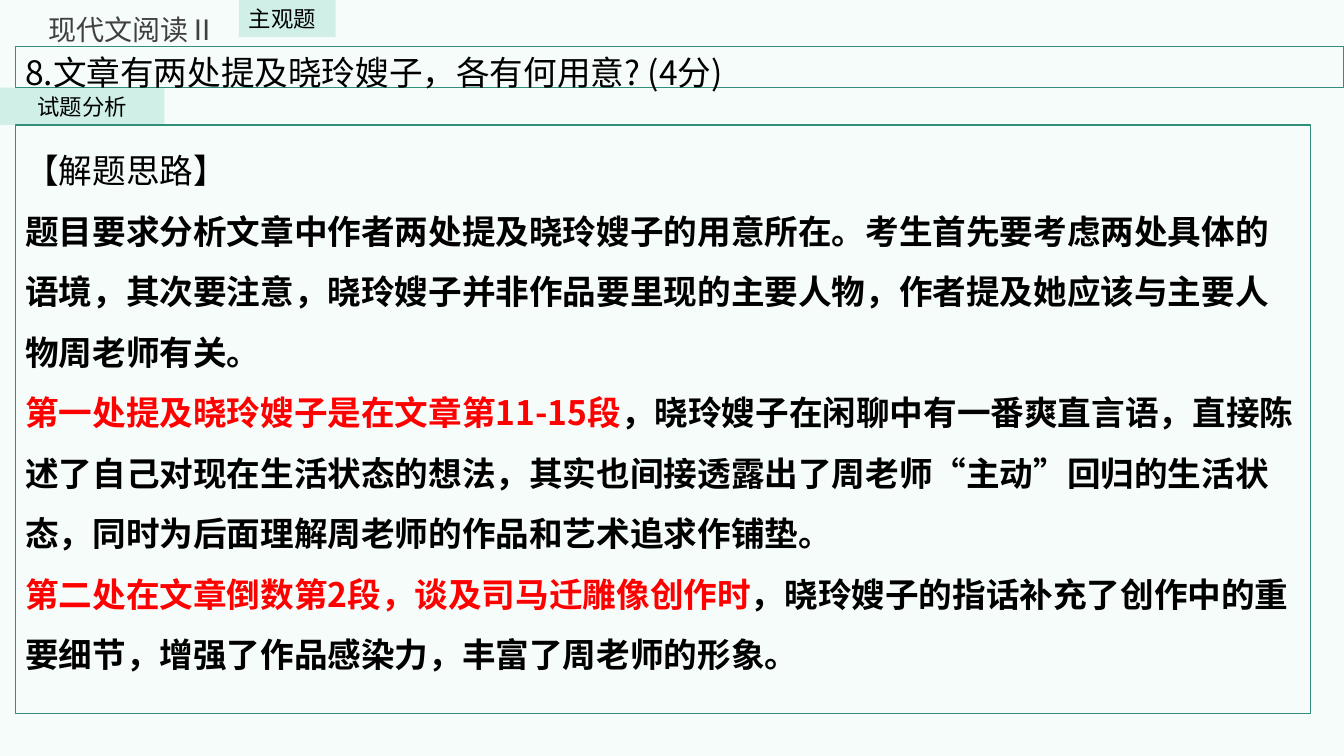
"""Build a reading-comprehension slide that analyses question 8."""
from pptx import Presentation
from pptx.dml.color import RGBColor
from pptx.enum.shapes import MSO_SHAPE
from pptx.enum.text import MSO_ANCHOR, MSO_AUTO_SIZE, PP_ALIGN
from pptx.oxml.ns import qn
from pptx.util import Inches, Pt
from lxml import etree

RECTANGLE = MSO_SHAPE.RECTANGLE
TOP, MIDDLE = MSO_ANCHOR.TOP, MSO_ANCHOR.MIDDLE
NO_AUTOFIT = MSO_AUTO_SIZE.NONE
LEFT, CENTER, JUSTIFY = PP_ALIGN.LEFT, PP_ALIGN.CENTER, PP_ALIGN.JUSTIFY

BACKGROUND = RGBColor(0xF6, 0xFC, 0xFA)
MINT = RGBColor(0xD0, 0xEF, 0xE7)
GREEN = RGBColor(0x31, 0x8F, 0x79)
GRAY = RGBColor(0x40, 0x40, 0x40)
BLACK = RGBColor(0, 0, 0)
RED = RGBColor(0xFF, 0, 0)
CHINESE_FONT = "Noto Sans CJK SC"

WIDTH, HEIGHT = 13.33, 7.5
MARGIN = 0.15
TAG_HEIGHT = 0.37
QUESTION_TOP, QUESTION_HEIGHT = 0.46, 0.41
TAG_TOP = QUESTION_TOP + QUESTION_HEIGHT
ANALYSIS_TOP = TAG_TOP + TAG_HEIGHT


def place(shape, left, top, width, height, anchor=MIDDLE):
    """Set the frame of a shape in inches and fix its text box settings."""
    shape.left, shape.top = Inches(left), Inches(top)
    shape.width, shape.height = Inches(width), Inches(height)
    frame = shape.text_frame
    frame.auto_size = NO_AUTOFIT
    frame.word_wrap = True
    frame.vertical_anchor = anchor


def style(paragraph, size, color, alignment=LEFT, latin=CHINESE_FONT, bold=False):
    """Set the font of a paragraph for Latin and East Asian text."""
    paragraph.alignment = alignment
    font = paragraph.font
    font.size, font.bold, font.name = Pt(size), bold, latin
    font.color.rgb = color
    properties = paragraph._p.pPr.find(qn("a:defRPr"))
    etree.SubElement(properties, qn("a:ea"), typeface=CHINESE_FONT)


presentation = Presentation()
presentation.slide_width, presentation.slide_height = Inches(WIDTH), Inches(HEIGHT)
slide = presentation.slides.add_slide(presentation.slide_layouts[1])
slide.background.fill.solid()
slide.background.fill.fore_color.rgb = BACKGROUND

title = slide.shapes.title
place(title, 0.38, 0.07, 2.34, 0.44)
title.text_frame.text = "现代文阅读Ⅱ"
style(title.text_frame.paragraphs[0], 20, GRAY)

analysis = slide.placeholders[1]
place(analysis, MARGIN, ANALYSIS_TOP, 12.85, 5.84, TOP)
analysis.line.color.rgb = GREEN
analysis.line.width = Pt(0.75)
analysis_paragraphs = [
    ("", "【解题思路】", False),
    ("", "题目要求分析文章中作者两处提及晓玲嫂子的用意所在。考生首先要考虑两处具体的语境，"
         "其次要注意，晓玲嫂子并非作品要里现的主要人物，作者提及她应该与主要人物周老师有关。", True),
    ("第一处提及晓玲嫂子是在文章第11-15段",
     "，晓玲嫂子在闲聊中有一番爽直言语，直接陈述了自己对现在生活状态的想法，"
     "其实也间接透露出了周老师“主动”回归的生活状态，同时为后面理解周老师的作品和艺术追求作铺垫。", True),
    ("第二处在文章倒数第2段，谈及司马迁雕像创作时",
     "，晓玲嫂子的指话补充了创作中的重要细节，增强了作品感染力，丰富了周老师的形象。", True),
]
for index, (highlight, explanation, bold) in enumerate(analysis_paragraphs):
    frame = analysis.text_frame
    paragraph = frame.add_paragraph() if index else frame.paragraphs[0]
    style(paragraph, 24, BLACK, bold=bold)
    paragraph.line_spacing = 1.5
    paragraph.space_before = Pt(0)
    properties = paragraph._p.pPr
    properties.set("marL", "0")
    properties.set("indent", "0")
    properties.find(qn("a:defRPr")).addprevious(etree.Element(qn("a:buNone")))
    if highlight:
        run = paragraph.add_run()
        run.text = highlight
        run.font.color.rgb = RED
    paragraph.add_run().text = explanation

boxes = [
    ("主观题", 2.37, 0, 0.96, TAG_HEIGHT, MINT, 16, LEFT, CHINESE_FONT),
    ("试题分析", 0, TAG_TOP, 1.63, TAG_HEIGHT, MINT, 16, CENTER, "Arial"),
    ("8.文章有两处提及晓玲嫂子，各有何用意? (4分)", MARGIN, QUESTION_TOP,
     WIDTH - MARGIN, QUESTION_HEIGHT, None, 24, JUSTIFY, CHINESE_FONT),
]
for text, left, top, width, height, fill, size, alignment, latin in boxes:
    box = slide.shapes.add_shape(RECTANGLE, 0, 0, 0, 0)
    place(box, left, top, width, height)
    box.shadow.inherit = False
    if fill:
        box.fill.solid()
        box.fill.fore_color.rgb = fill
        box.line.fill.background()
    else:
        box.fill.background()
        box.line.color.rgb = GREEN
        box.line.width = Pt(0.75)
        box.text_frame.margin_top = Inches(0.15)
    box.text_frame.text = text
    style(box.text_frame.paragraphs[0], size, BLACK, alignment, latin)

for front_shape in (analysis, title, box):
    slide.shapes._spTree.append(front_shape._element)

presentation.save("out.pptx")
